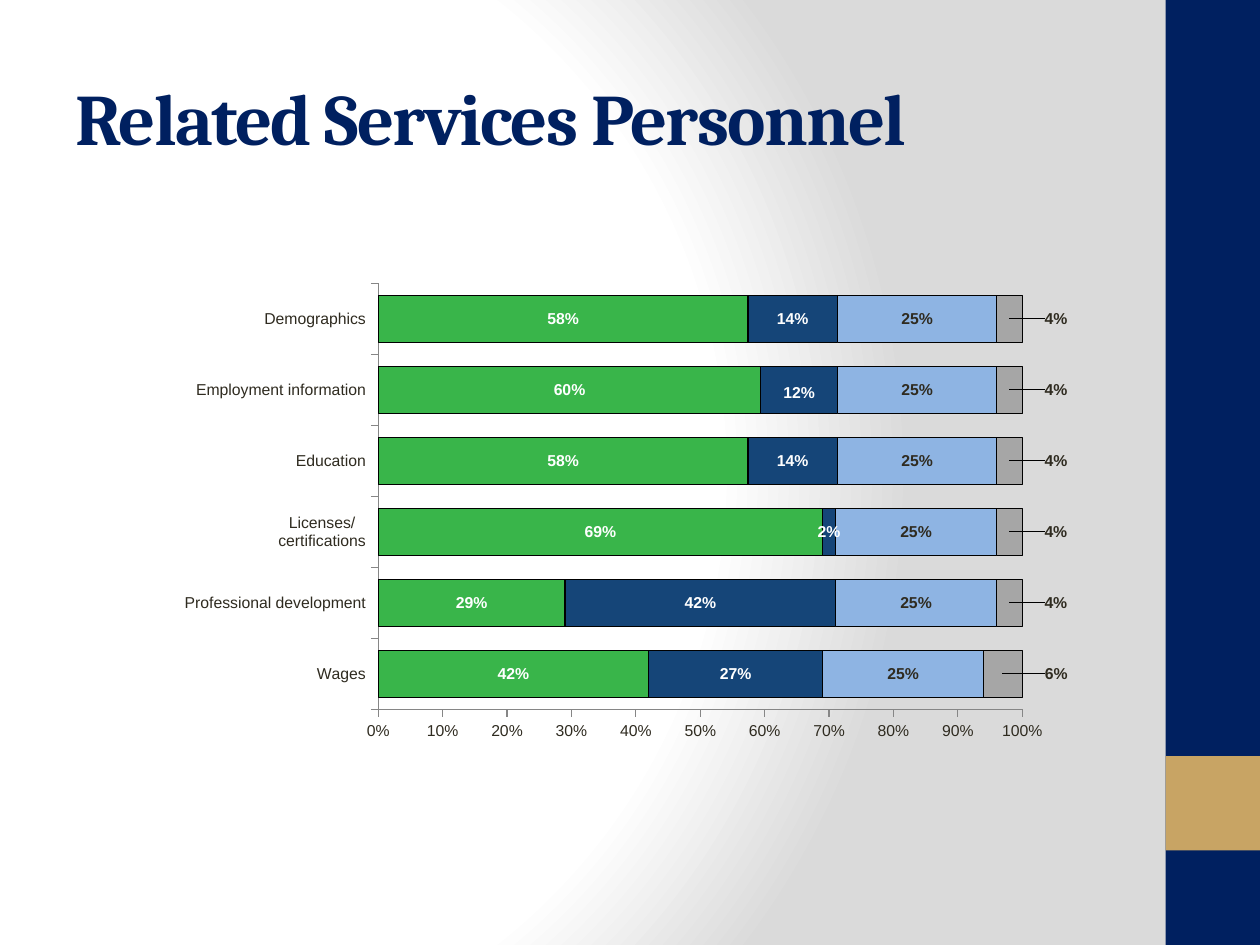
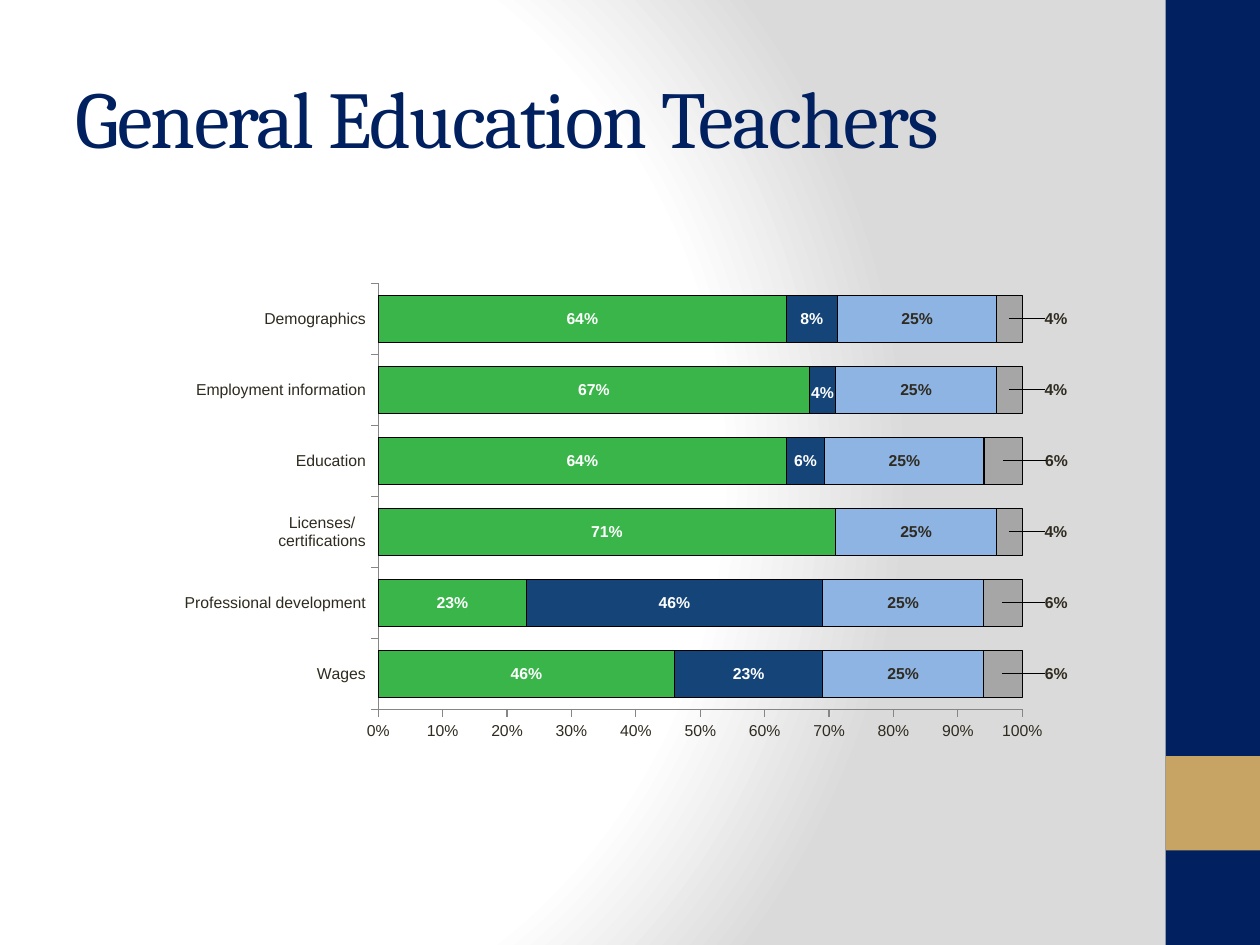
from dataclasses import dataclass

import pptx
import pptx.chart.data
import pptx.dml.color
import pptx.enum.chart
import pptx.enum.shapes
import pptx.enum.text
import pptx.oxml
import pptx.oxml.ns
import pptx.util
from pptx.util import Inches

NAVY, GOLD = "002060", "C8A464"
INK, WHITE, BLACK, GREY = "2F2B20", "FFFFFF", "000000", "868686"
TOPICS = ["Wages", "Professional development", "Licenses/\ncertifications",
          "Education", "Employment information", "Demographics"]

# Plot area as shares of the chart frame
LEFT, TOP, WIDE, HIGH = 0.278, 0.101, 0.568, 0.683
GAP = 0.03  # from the end of a bar to the middle of its outer label


@dataclass
class Band:
    top: float
    height: float
    fill: str


@dataclass
class Style:
    name: str
    fill: str
    ink: str


@dataclass
class Page:
    title: str
    size: float
    bold: bool
    rows: list[list[float]]


BANDS = [Band(0, 7.5, NAVY), Band(6, 0.75, GOLD)]
STYLES = [Style("Series 1", "39B54A", WHITE), Style("Series 2", "154578", WHITE),
          Style("Series 3", "8EB4E3", INK), Style("Series 4", "A6A6A6", INK)]
PAGES = [
    Page("Related Services Personnel", 41.4, True, [
        [0.42, 0.29, 0.69, 0.58, 0.6, 0.58],
        [0.27, 0.42, 0.02, 0.14, 0.12, 0.14],
        [0.25] * 6,
        [0.06, 0.04, 0.04, 0.04, 0.04, 0.04]]),
    Page("General Education Teachers", 46, False, [
        [0.46, 0.23, 0.71, 0.64, 0.67, 0.64],
        [0.23, 0.46, 0, 0.06, 0.04, 0.08],
        [0.25] * 6,
        [0.06, 0.06, 0.04, 0.06, 0.04, 0.04]]),
]


def rgb(code: str) -> pptx.dml.color.RGBColor:
    return pptx.dml.color.RGBColor.from_string(code)


def set_font(font, name: str, size: float, ink: str, bold: bool = False) -> None:
    font.name, font.size, font.bold = name, pptx.util.Pt(size), bold
    font.color.rgb = rgb(ink)


def node(text: str, *spaces: str):
    """Parse one XML element that uses the given namespace prefixes."""
    tag, rest = text.split(">", 1)
    return pptx.oxml.parse_xml(f"{tag} {pptx.oxml.ns.nsdecls(*spaces)}>{rest}")


def layout_xml(**parts):
    body = "".join(f'<c:{key} val="{val}"/>' for key, val in parts.items())
    return node(f"<c:layout><c:manualLayout>{body}</c:manualLayout></c:layout>", "c")


# Shared look: backdrop and side bands
def set_back(layout) -> None:
    stops = "".join(f'<a:gs pos="{pos}000"><a:srgbClr val="{code}"/></a:gs>'
                    for pos, code in [(0, WHITE), (75, WHITE), (100, "DADADA")])
    back = node(
        f'<p:bg><p:bgPr><a:gradFill rotWithShape="1"><a:gsLst>{stops}</a:gsLst>'
        '<a:path path="circle"><a:fillToRect l="20000" t="50000" r="100000" b="50000"/>'
        '</a:path></a:gradFill><a:effectLst/></p:bgPr></p:bg>', "p", "a")
    layout.element.cSld.insert(0, back)


def add_bands(slide, layout) -> None:
    """Draw the bands and hand them to the layout, so all slides show them."""
    for band in BANDS:
        shape = slide.shapes.add_shape(
            pptx.enum.shapes.MSO_SHAPE.RECTANGLE, Inches(9.25), Inches(band.top),
            Inches(0.75), Inches(band.height))
        shape.shadow.inherit = False
        shape.fill.solid()
        shape.fill.fore_color.rgb = rgb(band.fill)
        shape.line.fill.background()
        layout.shapes.element.append(shape.element)


def set_title(slide, page: Page) -> None:
    title = slide.shapes.title
    title.left, title.top = Inches(0.5), Inches(0.3)
    title.width, title.height = Inches(8.33), Inches(1.25)
    frame = title.text_frame
    frame.text = page.title
    frame.word_wrap = True
    frame.auto_size = pptx.enum.text.MSO_AUTO_SIZE.NONE
    frame.vertical_anchor = pptx.enum.text.MSO_ANCHOR.MIDDLE
    para = frame.paragraphs[0]
    para.alignment = pptx.enum.text.PP_ALIGN.LEFT
    set_font(para.font, "Cambria", page.size, NAVY, page.bold)
    para.runs[0].font.bold = page.bold
    para.runs[0].font._element.set("spc", "-100")


# Chart parts
def set_axis(axis) -> None:
    axis.has_major_gridlines = False
    axis.major_tick_mark = pptx.enum.chart.XL_TICK_MARK.OUTSIDE
    axis.minor_tick_mark = pptx.enum.chart.XL_TICK_MARK.NONE
    axis.format.line.color.rgb = rgb(GREY)
    axis.format.line.width = pptx.util.Pt(0.75)
    set_font(axis.tick_labels.font, "Arial", 9, INK)


def set_series(series, style: Style) -> None:
    series.format.fill.solid()
    series.format.fill.fore_color.rgb = rgb(style.fill)
    series.format.line.color.rgb = rgb(BLACK)
    series.format.line.width = pptx.util.Pt(0.75)
    labels = series.data_labels
    labels.show_value = True
    labels.number_format, labels.number_format_is_linked = "0%", False
    set_font(labels.font, "Arial", 9, style.ink, True)


def own_label(series, point: int, style: Style):
    """Give one point its own label and return the label's element."""
    set_font(series.points[point].data_label.font, "Arial", 9, style.ink, True)
    return series.data_labels._element.xpath(f'c:dLbl[c:idx/@val="{point}"]')[0]


def place_labels(plot, page: Page) -> None:
    second, last = plot.series[1], plot.series[3]
    for point, value in enumerate(page.rows[3]):
        shift = round(GAP + value * WIDE / 2, 3)
        own_label(last, point, STYLES[3]).insert(1, layout_xml(x=shift, y=0))
    own_label(second, 4, STYLES[1]).insert(1, layout_xml(x=0, y=0.005))
    for point, value in enumerate(page.rows[1]):
        if value == 0:
            label = own_label(second, point, STYLES[1])
            for part in label[1:]:
                label.remove(part)
            label.append(node('<c:delete val="1"></c:delete>'.replace(
                ' val="1"', ""), "c"))
            label[1].set("val", "1")


def add_bars(slide, page: Page) -> None:
    data = pptx.chart.data.CategoryChartData(number_format="0%")
    data.categories = TOPICS
    for style, row in zip(STYLES, page.rows):
        data.add_series(style.name, row)
    chart = slide.shapes.add_chart(
        pptx.enum.chart.XL_CHART_TYPE.BAR_STACKED_100, Inches(0.5), Inches(1.75),
        Inches(9), Inches(4.95), data).chart
    chart.has_title = chart.has_legend = False
    set_font(chart.font, "Calibri", 10, INK)

    area = chart.element.xpath("c:chart/c:plotArea")[0]
    for old in area.xpath("c:layout"):
        area.remove(old)
    area.insert(0, layout_xml(layoutTarget="inner", xMode="edge", yMode="edge",
                              x=LEFT, y=TOP, w=WIDE, h=HIGH))

    set_axis(chart.category_axis)
    axis = chart.value_axis
    set_axis(axis)
    axis.minimum_scale, axis.maximum_scale, axis.major_unit = 0, 1, 0.1
    axis.tick_labels.number_format = "0%"
    axis.tick_labels.number_format_is_linked = False

    plot = chart.plots[0]
    plot.gap_width, plot.overlap, plot.vary_by_categories = 50, 100, False
    for series, style in zip(plot.series, STYLES):
        set_series(series, style)
    place_labels(plot, page)


def main() -> None:
    deck = pptx.Presentation()
    deck.slide_width, deck.slide_height = Inches(10), Inches(7.5)
    layout = deck.slide_layouts.get_by_name("Title Only")
    set_back(layout)
    for page in PAGES:
        slide = deck.slides.add_slide(layout)
        if page is PAGES[0]:
            add_bands(slide, layout)
        set_title(slide, page)
        add_bars(slide, page)
    deck.save("out.pptx")


if __name__ == "__main__":
    main()
